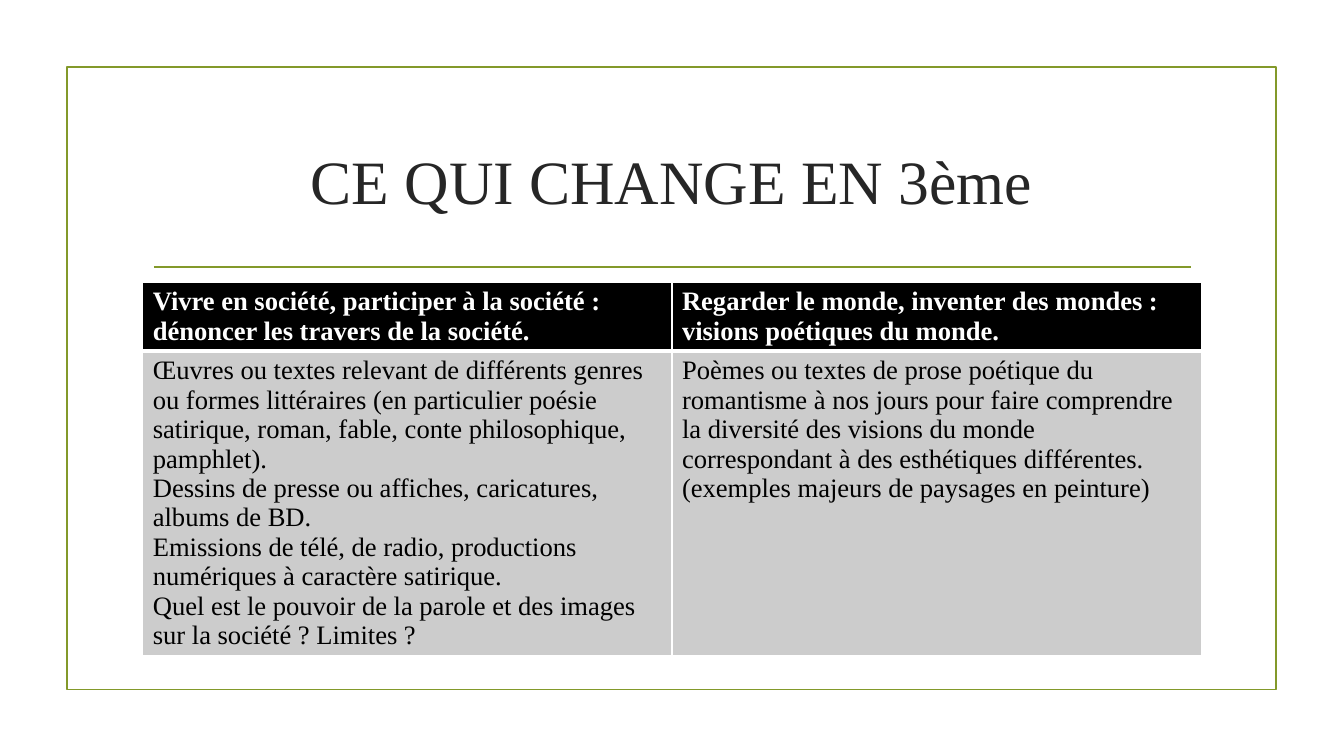
from lxml import etree
from pptx import Presentation
from pptx.dml.color import RGBColor
from pptx.enum import shapes, text
from pptx.oxml import ns
from pptx.util import Pt

FONT = "Times New Roman"
OLIVE = RGBColor(0x83, 0x99, 0x2A)
CHARCOAL = RGBColor(0x26, 0x26, 0x26)
BLACK = RGBColor(0, 0, 0)
GREY = RGBColor(0xCC, 0xCC, 0xCC)
WHITE = RGBColor(0xFF, 0xFF, 0xFF)

TITLE = "CE QUI CHANGE EN 3ème"
THEMES = [
    "Vivre en société, participer à la société : dénoncer les travers de la société.",
    "Regarder le monde, inventer des mondes : visions poétiques du monde.",
]
WORKS = [
    "Œuvres ou textes relevant de différents genres ou formes littéraires "
    "(en particulier poésie satirique, roman, fable, conte philosophique, pamphlet).\n"
    "Dessins de presse ou affiches, caricatures, albums de BD.\n"
    "Emissions de télé, de radio, productions numériques à caractère satirique.\n"
    "Quel est le pouvoir de la parole et des images sur la société ? Limites ?",
    "Poèmes ou textes de prose poétique du romantisme à nos jours pour faire "
    "comprendre la diversité des visions du monde correspondant à des esthétiques "
    "différentes. (exemples majeurs de paysages en peinture)",
]

LEFT, WIDTH = Pt(102), Pt(756)


def style_font(font, size, color, bold=False):
    font.name, font.size, font.bold = FONT, Pt(size), bold
    font.color.rgb = color


def style_line(line):
    line.color.rgb = OLIVE
    line.width = Pt(1.25)


def add_frame(slide):
    frame = slide.shapes.add_shape(
        shapes.MSO_SHAPE.RECTANGLE, Pt(47.7), Pt(48), Pt(864), Pt(444.5))
    frame.shadow.inherit = False
    frame.fill.background()
    style_line(frame.line)


def add_rule(slide):
    y = Pt(190.8)
    rule = slide.shapes.add_connector(
        shapes.MSO_CONNECTOR.STRAIGHT, Pt(110), y, Pt(850.5), y)
    style_line(rule.line)
    etree.SubElement(rule._element.spPr, ns.qn("a:effectLst"))


def set_title(slide):
    title = slide.shapes.title
    title.left, title.top, title.width, title.height = LEFT, Pt(77), WIDTH, Pt(103)
    title.text_frame.text = TITLE
    title.text_frame.vertical_anchor = text.MSO_ANCHOR.MIDDLE
    heading = title.text_frame.paragraphs[0]
    heading.alignment = text.PP_ALIGN.CENTER
    style_font(heading.runs[0].font, 44, CHARCOAL)


def set_borders(cell, widths):
    """Give the cell white borders; widths maps L, R, T, B to points."""
    properties = cell._tc.get_or_add_tcPr()
    for position, (side, width) in enumerate(widths.items()):
        border = etree.Element(ns.qn(f"a:ln{side}"), w=str(Pt(width)))
        fill = etree.SubElement(border, ns.qn("a:solidFill"))
        etree.SubElement(fill, ns.qn("a:srgbClr"), val=str(WHITE))
        properties.insert(position, border)


def fill_cell(cell, content, background, color, bold, top, bottom):
    cell.text_frame.text = content
    for paragraph in cell.text_frame.paragraphs:
        for run in paragraph.runs:
            style_font(run.font, 19, color, bold)
    cell.fill.solid()
    cell.fill.fore_color.rgb = background
    set_borders(cell, {"L": 1, "R": 1, "T": top, "B": bottom})


def add_themes_table(slide):
    table = slide.shapes.add_table(
        2, len(THEMES), LEFT, Pt(201.6), WIDTH, Pt(266)).table
    table.rows[0].height, table.rows[1].height = Pt(49), Pt(217)
    for column, (theme, works) in enumerate(zip(THEMES, WORKS)):
        fill_cell(table.cell(0, column), theme, BLACK, WHITE, True, 1, 3)
        fill_cell(table.cell(1, column), works, GREY, BLACK, False, 3, 1)


def main():
    deck = Presentation()
    deck.slide_width, deck.slide_height = Pt(960), Pt(540)
    slide = deck.slides.add_slide(deck.slide_layouts[5])
    add_frame(slide)
    add_rule(slide)
    set_title(slide)
    add_themes_table(slide)
    deck.save("out.pptx")


if __name__ == "__main__":
    main()
